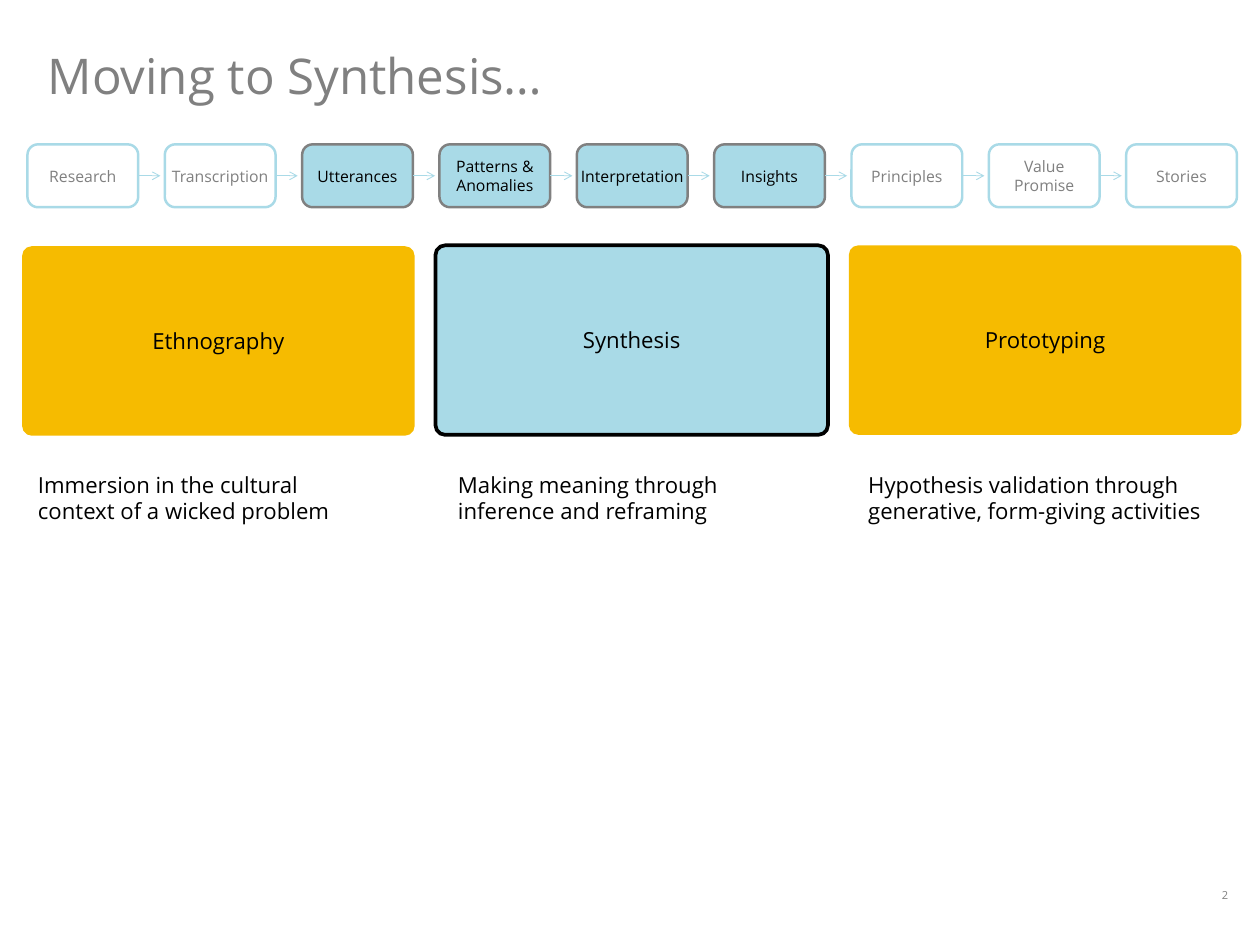
"""Builds the slide that places synthesis within the design process."""
from lxml.etree import SubElement
from pptx import Presentation
from pptx.dml.color import RGBColor
from pptx.enum.shapes import MSO_CONNECTOR, MSO_SHAPE
from pptx.enum.text import MSO_ANCHOR as ANCHOR, MSO_AUTO_SIZE as FIT, PP_ALIGN as ALIGN
from pptx.oxml.ns import qn
from pptx.util import Inches, Pt

COLORS = {"gray": "808080", "blue": "A9DAE7", "gold": "F6BB00",
          "black": "000000", "white": "FFFFFF"}
FRAME = {"word_wrap": True, "auto_size": FIT.NONE, "vertical_anchor": ANCHOR.MIDDLE}
STEP_FRAME = {**FRAME, "margin_left": 0, "margin_right": 0}
TITLE_FRAME = {**STEP_FRAME, "margin_top": 0, "margin_bottom": 0}
TOP_FRAME = {**FRAME, "vertical_anchor": ANCHOR.TOP}

STEPS = ["Research", "Transcription", "Utterances", "Patterns & Anomalies",
         "Interpretation", "Insights", "Principles", "Value\nPromise", "Stories"]
SYNTHESIS_STEPS = STEPS[2:6]
STEP_LEFT, STEP_TOP, STEP_W, STEP_H, STEP_PITCH = 0.31, 1.63, 1.25, 0.71, 1.55
ARROW_LENGTH = 0.25

PHASE_LEFT, PHASE_W, PHASE_H, PHASE_PITCH = 0.25, 4.43, 2.14, 4.665
PHASES = [
    ("Ethnography", 2.78, "gold", None, 0.33,
     "Immersion in the cultural context of a wicked problem"),
    ("Synthesis", 2.77, "blue", "black", 5.07,
     "Making meaning through inference and reframing"),
    ("Prototyping", 2.77, "gold", None, 9.7,
     "Hypothesis validation through generative, form-giving activities"),
]


def rgb(name):
    return RGBColor.from_string(COLORS[name])


def box(left, top, width, height):
    return [Inches(v) for v in (left, top, width, height)]


def write(sp, text, size, color, align, frame):
    tf = sp.text_frame
    for name, value in frame.items():
        setattr(tf, name, value)
    tf.text = text
    for p in tf.paragraphs:
        p.alignment = align
        for r in p.runs:
            for name, value in {"name": "Open Sans", "size": Pt(size)}.items():
                setattr(r.font, name, value)
            r.font.color.rgb = rgb(color)


def add_title(s, text):
    sp = s.shapes.title
    sp.left, sp.top, sp.width, sp.height = box(0.54, 0.51, 12.67, 0.67)
    write(sp, text, 40, "gray", ALIGN.LEFT, TITLE_FRAME)


def add_text(s, place, text, size, color, align):
    write(s.shapes.add_textbox(*place), text, size, color, align, TOP_FRAME)


def add_card(s, place, fill, line, line_width, corner):
    sp = s.shapes.add_shape(MSO_SHAPE.ROUNDED_RECTANGLE, *place)
    sp.shadow.inherit = False
    sp.adjustments[0] = corner
    sp.fill.solid()
    sp.fill.fore_color.rgb = rgb(fill)
    if line:
        sp.line.color.rgb = rgb(line)
        sp.line.width = Pt(line_width)
    else:
        sp.line.fill.background()
    return sp


def add_arrow(s, left, y):
    cx = s.shapes.add_connector(MSO_CONNECTOR.STRAIGHT, Inches(left), Inches(y),
                                Inches(left + ARROW_LENGTH), Inches(y))
    cx.line.color.rgb = rgb("blue")
    cx.line.width = Pt(0.75)
    SubElement(cx.line._get_or_add_ln(), qn("a:tailEnd"), type="arrow")
    SubElement(cx._element.spPr, qn("a:effectLst"))


def add_steps(s):
    for i, step in enumerate(STEPS):
        left = STEP_LEFT + i * STEP_PITCH
        active = step in SYNTHESIS_STEPS
        fill, line, color = ("blue", "gray", "black") if active else ("white", "blue", "gray")
        sp = add_card(s, box(left, STEP_TOP, STEP_W, STEP_H), fill, line, 2, 0.1667)
        write(sp, step, 12.8, color, ALIGN.CENTER, STEP_FRAME)
        if i < len(STEPS) - 1:
            add_arrow(s, left + STEP_W, STEP_TOP + STEP_H / 2)


def add_phases(s):
    for i, (name, top, fill, line, caption_left, caption) in enumerate(PHASES):
        left = PHASE_LEFT + i * PHASE_PITCH
        sp = add_card(s, box(left, top, PHASE_W, PHASE_H), fill, line, 3, 0.051)
        write(sp, name, 18, "black", ALIGN.CENTER, FRAME)
        add_text(s, box(caption_left, 5.27, 4.02, 0.71), caption, 18, "black", ALIGN.LEFT)


def main():
    prs = Presentation()
    prs.slide_width, prs.slide_height = Inches(14.22), Inches(10.67)
    s = prs.slides.add_slide(prs.slide_layouts[5])
    add_title(s, "Moving to Synthesis…")
    add_steps(s)
    add_phases(s)
    add_text(s, box(13.57, 9.98, 0.51, 0.3), "2", 9, "gray", ALIGN.CENTER)
    prs.save("out.pptx")


if __name__ == "__main__":
    main()
